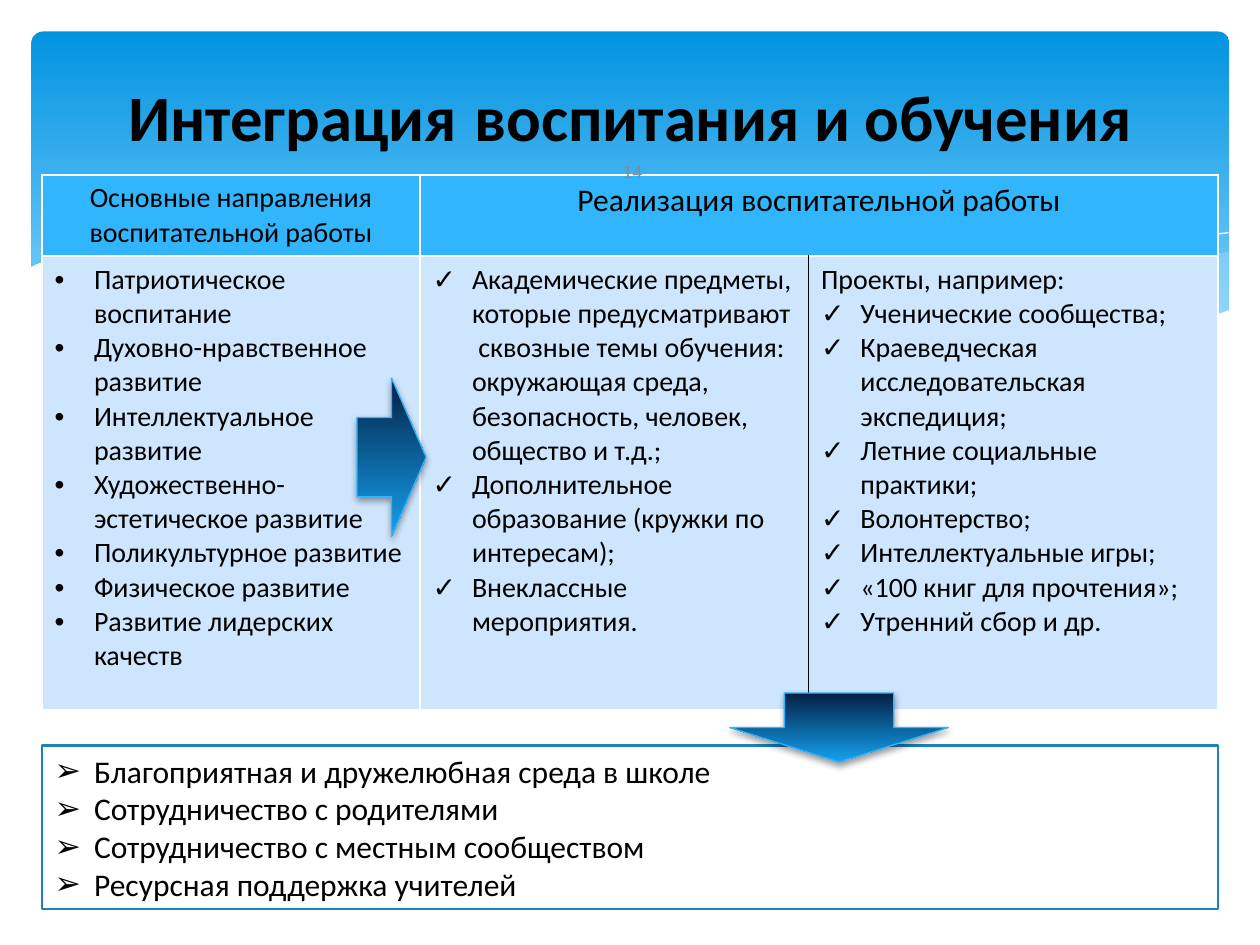
from lxml import etree
from pptx import Presentation, util as u
from pptx.dml.color import RGBColor
from pptx.enum import shapes, text
from pptx.oxml import ns, parse_xml

Pt = u.Pt
FONT = "Calibri"
CENTER = text.PP_ALIGN.CENTER

# Wave outlines in points: points, fill, opacity in percent
FILLED_WAVES = [
    ([(702, 144), (683, 147), (652, 153), (620, 161), (561, 175), (508, 185), (476, 191),
      (508, 195), (545, 199), (586, 200), (621, 198), (652, 194), (683, 187), (702, 178)],
     "C6E7FC", 29),
    ([(643, 197), (603, 191), (558, 183), (508, 173), (453, 160), (420, 152), (390, 146),
      (361, 141), (318, 136), (274, 133), (236, 134), (206, 138), (246, 143), (291, 151),
      (354, 167), (408, 179), (456, 188), (500, 194), (546, 199), (590, 200), (631, 198)],
     "C6E7FC", 40),
]
LINE_WAVES = [
    [(222, 140), (254, 136), (289, 135), (338, 136), (400, 142), (458, 150), (523, 163),
     (598, 181), (653, 196)],
    [(441, 185), (484, 174), (539, 161), (602, 147), (655, 138), (702, 133)],
]
WHITE_WAVE = [
    (703, 177), (670, 189), (630, 197), (583, 199), (535, 197), (481, 191), (434, 183),
    (381, 172), (322, 158), (263, 145), (210, 137), (166, 133), (127, 132), (95, 134),
    (68, 139), (48, 143), (33, 147), (21, 151), (17, 153), (17, 237), (703, 237)]

DIRECTIONS = [
    "Патриотическое воспитание", "Духовно-нравственное развитие",
    "Интеллектуальное развитие", "Художественно-эстетическое развитие",
    "Поликультурное развитие", "Физическое развитие", "Развитие лидерских качеств"]
LESSONS = [
    "Академические предметы, которые предусматривают  сквозные темы обучения: "
    "окружающая среда, безопасность, человек, общество и т.д.;",
    "Дополнительное образование (кружки по интересам);", "Внеклассные мероприятия."]
PROJECTS = [
    "Ученические сообщества;", "Краеведческая исследовательская экспедиция;",
    "Летние социальные практики;", "Волонтерство;", "Интеллектуальные игры;",
    "«100 книг для прочтения»;", "Утренний сбор и др."]
OUTCOMES = [
    "Благоприятная и дружелюбная среда в школе", "Сотрудничество с родителями",
    "Сотрудничество с местным сообществом", "Ресурсная поддержка учителей"]


def color(value):
    return RGBColor.from_string(value)


def apply(target, values):
    for name, value in values.items():
        setattr(target, name, value)


def place(shape, left, top, width, height):
    apply(shape, dict(left=Pt(left), top=Pt(top), width=Pt(width), height=Pt(height)))


def paint(shape, fill=None, line=None, width=1):
    if fill:
        shape.fill.solid()
        shape.fill.fore_color.rgb = color(fill)
    else:
        shape.fill.background()
    if line:
        shape.line.color.rgb = color(line)
        shape.line.width = Pt(width)
    else:
        shape.line.fill.background()


def paint_gradient(shape, start, end, end_position=1):
    """Vertical gradient from top to bottom."""
    shape.fill.gradient()
    shape.fill.gradient_angle = 270
    stops = shape.fill.gradient_stops
    for stop, value, position in zip(stops, (start, end), (0, end_position)):
        stop.color.rgb = color(value)
        stop.position = position


def write(frame, lines, size, bullet=None, plain=0, align=None, font=FONT, ink="000000",
          bold=False):
    """Write one paragraph per line; the first `plain` lines get no bullet."""
    for index, line in enumerate(lines):
        paragraph = frame.paragraphs[0] if index == 0 else frame.add_paragraph()
        apply(paragraph, dict(alignment=align, space_before=Pt(0)))
        run = paragraph.add_run()
        run.text = line
        apply(run.font, dict(name=font, size=Pt(size), bold=bold))
        run.font.color.rgb = color(ink)
        if bullet and index >= plain:
            properties = paragraph._p.get_or_add_pPr()
            properties.set("marL", str(Pt(22.5)))
            properties.set("indent", str(Pt(-22.5)))
            etree.SubElement(properties, ns.qn("a:buFont")).set("typeface", "Arial")
            etree.SubElement(properties, ns.qn("a:buChar")).set("char", bullet)


def add_wave(slide, points, fill=None, opacity=100, line=None):
    builder = slide.shapes.build_freeform(*points[0], scale=Pt(1))
    builder.add_line_segments(points[1:], close=line is None)
    wave = builder.convert_to_shape()
    wave.shadow.inherit = False
    paint(wave, fill, line, 0)
    if opacity < 100:
        solid = wave._element.spPr.find(ns.qn("a:solidFill"))
        etree.SubElement(solid[0], ns.qn("a:alpha")).set("val", str(opacity * 1000))


def add_backdrop(slide):
    banner = slide.shapes.add_shape(
        shapes.MSO_SHAPE.ROUNDED_RECTANGLE, Pt(18), Pt(18), Pt(684.5), Pt(194.5))
    banner.adjustments[0] = 0.034
    banner.shadow.inherit = False
    banner.line.fill.background()
    paint_gradient(banner, "0293E0", "83D3FE", 0.9)
    for points, fill, opacity in FILLED_WAVES:
        add_wave(slide, points, fill, opacity)
    for points in LINE_WAVES:
        add_wave(slide, points, line="FFFFFF")
    add_wave(slide, WHITE_WAVE, "FFFFFF")


def bring_to_front(slide, shape):
    slide.shapes._spTree.append(shape._element)


def add_title(slide):
    title = slide.shapes.title
    bring_to_front(slide, title)
    place(title, 36, 26.5, 648, 73.5)
    apply(title.text_frame, dict(vertical_anchor=text.MSO_ANCHOR.MIDDLE, word_wrap=True,
                                 auto_size=text.MSO_AUTO_SIZE.NONE))
    write(title.text_frame, ["Интеграция воспитания и обучения"], 37, align=CENTER, bold=True)
    first_run = title.text_frame.paragraphs[0].runs[0]
    first_run.text = "Интеграция"
    for part, size in ((" ", 44), ("воспитания и обучения", 37)):
        run = title.text_frame.paragraphs[0].add_run()
        run.text = part
        apply(run.font, dict(name=FONT, size=Pt(size), bold=True))
        run.font.color.rgb = color("000000")


def set_borders(cell, **special):
    """White 1 pt borders, except the sides given by name."""
    properties = cell._tc.get_or_add_tcPr()
    for index, side in enumerate(("lnL", "lnR", "lnT", "lnB")):
        value = special.get(side, "FFFFFF")
        properties.insert(index, parse_xml(
            f'<a:{side} {ns.nsdecls("a")} w="{Pt(1)}"><a:solidFill>'
            f'<a:srgbClr val="{value}"/></a:solidFill></a:{side}>'))


def add_table(slide):
    table = slide.shapes.add_table(2, 3, Pt(24), Pt(100), Pt(672), Pt(304.5)).table
    for column, width in zip(table.columns, (216, 222, 234)):
        column.width = Pt(width)
    for row, height in zip(table.rows, (45.5, 259)):
        row.height = Pt(height)
    table.cell(0, 1).merge(table.cell(0, 2))
    for row, fill in enumerate(("31B6FD", "CEE5FE")):
        for column in range(3):
            cell = table.cell(row, column)
            cell.fill.solid()
            cell.fill.fore_color.rgb = color(fill)
            divider = {(1, 1): {"lnR": "000000"}, (1, 2): {"lnL": "000000"}}
            set_borders(cell, **divider.get((row, column), {}))

    def fill_cell(row, column, *content, **style):
        write(table.cell(row, column).text_frame, *content, **style)

    fill_cell(0, 0, ["Основные направления воспитательной работы"], 16, align=CENTER)
    fill_cell(0, 1, ["Реализация воспитательной работы"], 18, align=CENTER)
    fill_cell(1, 0, DIRECTIONS, 16, "•")
    fill_cell(1, 1, LESSONS, 16, "✓")
    fill_cell(1, 2, ["Проекты, например:"] + PROJECTS, 16, "✓", plain=1)


def add_outcomes(slide):
    body = slide.placeholders[1]
    bring_to_front(slide, body)
    place(body, 24, 426, 672, 93.5)
    paint(body, "FFFFFF", "1C83B9", 1.25)
    apply(body.text_frame, dict(vertical_anchor=text.MSO_ANCHOR.MIDDLE, word_wrap=True,
                                auto_size=text.MSO_AUTO_SIZE.NONE))
    write(body.text_frame, OUTCOMES, 18, "➢")


def add_arrow(slide, kind, *box):
    arrow = slide.shapes.add_shape(kind, *map(Pt, box))
    paint_gradient(arrow, "041F44", "14A2EF")
    arrow.line.color.rgb = color("31B6FD")
    arrow.line.width = Pt(0.75)
    arrow._element.spPr.append(parse_xml(
        f'<a:effectLst {ns.nsdecls("a")}><a:outerShdw blurRad="{Pt(4)}" dist="{Pt(2)}" '
        'dir="5400000" rotWithShape="0"><a:srgbClr val="000000"><a:alpha val="38000"/>'
        '</a:srgbClr></a:outerShdw></a:effectLst>'))


def add_page_number(slide):
    frame = slide.shapes.add_textbox(Pt(343.5), Pt(80.5), Pt(36), Pt(34.5)).text_frame
    apply(frame, dict(word_wrap=True, vertical_anchor=text.MSO_ANCHOR.MIDDLE))
    write(frame, ["14"], 10, align=CENTER, font="Arial", ink="898989")


def main():
    presentation = Presentation()
    apply(presentation, dict(slide_width=Pt(720), slide_height=Pt(540)))
    slide = presentation.slides.add_slide(presentation.slide_layouts[1])
    add_backdrop(slide)
    add_title(slide)
    add_table(slide)
    add_outcomes(slide)
    add_arrow(slide, shapes.MSO_SHAPE.RIGHT_ARROW, 204, 216, 39.5, 90.5)
    add_arrow(slide, shapes.MSO_SHAPE.DOWN_ARROW, 417, 396, 125, 39.5)
    add_page_number(slide)
    presentation.save("out.pptx")


if __name__ == "__main__":
    main()
